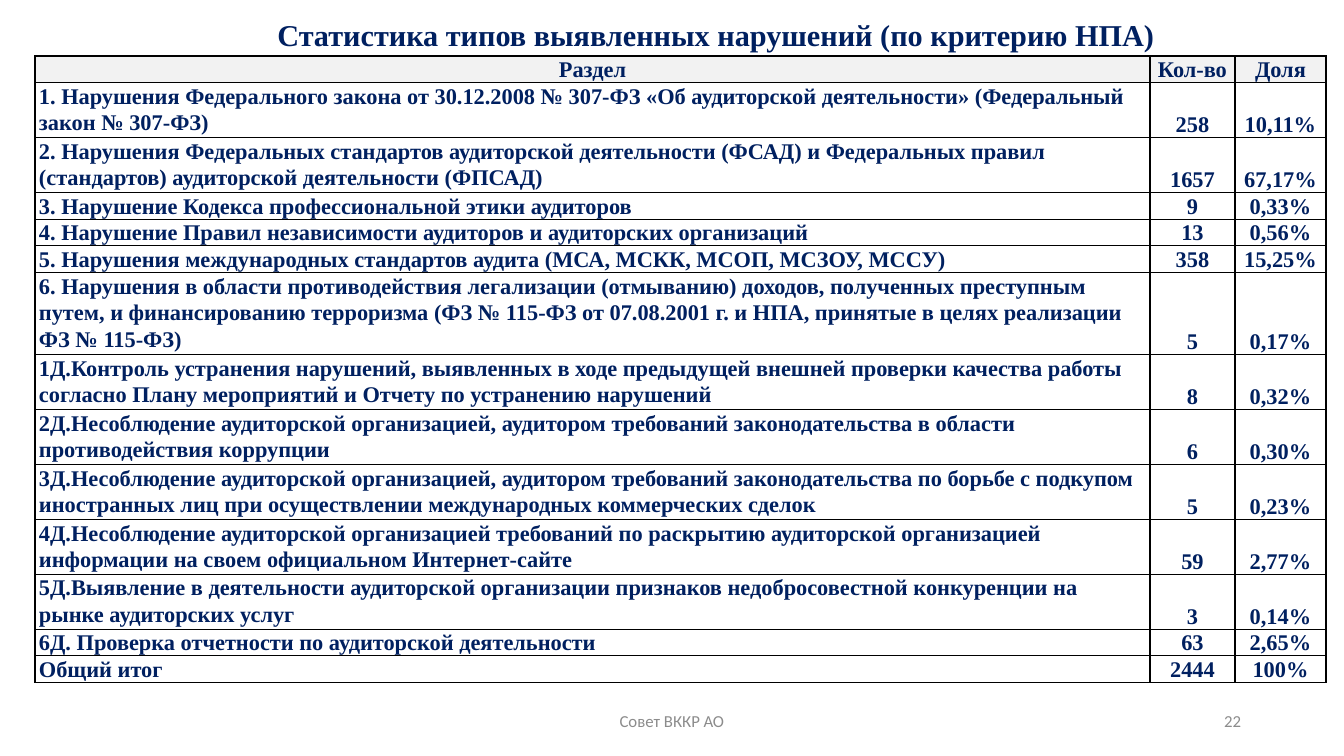
from pptx import Presentation
from pptx.dml.color import RGBColor
from pptx.enum.text import MSO_ANCHOR, PP_ALIGN
from pptx.oxml import parse_xml
from pptx.util import Emu, Pt

COLORS = {"navy": "002060", "grey": "8C8C8C", "head": "F2F2F2", "line": "000000"}
SERIF = "Times New Roman"
NS = "http://schemas.openxmlformats.org/drawingml/2006/main"


def px(n):
    return Emu(round(n * 914400 / 100.8))


def write(frame, text, size, font, color, align, bold=False):
    par = frame.paragraphs[0]
    par.alignment = align
    run = par.add_run()
    run.text = text
    run.font.size = Pt(size)
    run.font.name = font
    run.font.bold = bold
    run.font.color.rgb = RGBColor.from_string(COLORS[color])
    return par


deck = Presentation()
deck.slide_width, deck.slide_height = px(1344), px(756)
slide = deck.slides.add_slide(deck.slide_layouts[6])

title = slide.shapes.add_textbox(px(90), px(0), px(1202), px(57)).text_frame
title.word_wrap = True
title.vertical_anchor = MSO_ANCHOR.MIDDLE
title.margin_left, title.margin_right = px(60), px(10)
title.margin_top, title.margin_bottom = px(12), px(0)
write(title, "Статистика типов выявленных нарушений (по критерию НПА)",
      21.6, SERIF, "navy", PP_ALIGN.CENTER, True)

rows = [
    (26, "Раздел", "Кол-во", "Доля"),
    (55, "1. Нарушения Федерального закона от 30.12.2008 № 307-ФЗ «Об аудиторской деятельности» (Федеральный закон № 307-ФЗ)", "258", "10,11%"),
    (55, "2. Нарушения Федеральных стандартов аудиторской деятельности (ФСАД) и Федеральных правил (стандартов) аудиторской деятельности (ФПСАД)", "1657", "67,17%"),
    (26, "3. Нарушение Кодекса профессиональной этики аудиторов", "9", "0,33%"),
    (26, "4. Нарушение Правил независимости аудиторов и аудиторских организаций", "13", "0,56%"),
    (26, "5. Нарушения международных стандартов аудита (МСА, МСКК, МСОП, МСЗОУ, МССУ)", "358", "15,25%"),
    (82, "6. Нарушения в области противодействия легализации (отмыванию) доходов, полученных преступным путем, и финансированию терроризма (ФЗ № 115-ФЗ от 07.08.2001 г. и НПА, принятые в целях реализации ФЗ № 115-ФЗ)", "5", "0,17%"),
    (55, "1Д.Контроль устранения нарушений, выявленных в ходе предыдущей внешней проверки качества работы согласно Плану мероприятий и Отчету по устранению нарушений", "8", "0,32%"),
    (55, "2Д.Несоблюдение аудиторской организацией, аудитором требований законодательства в области противодействия коррупции", "6", "0,30%"),
    (55, "3Д.Несоблюдение аудиторской организацией, аудитором требований законодательства по борьбе с подкупом иностранных лиц при осуществлении международных коммерческих сделок", "5", "0,23%"),
    (55, "4Д.Несоблюдение аудиторской организацией требований по раскрытию аудиторской организацией информации на своем официальном Интернет-сайте", "59", "2,77%"),
    (55, "5Д.Выявление в деятельности аудиторской организации признаков недобросовестной конкуренции на рынке аудиторских услуг", "3", "0,14%"),
    (26, "6Д. Проверка отчетности по аудиторской деятельности", "63", "2,65%"),
    (26, "Общий итог", "2444", "100%"),
]
widths = [1115, 85, 91]
high = sum(row[0] for row in rows)
table = slide.shapes.add_table(len(rows), len(widths), px(35), px(56),
                               px(sum(widths)), px(high)).table
table.horz_banding = False
for col, width in zip(table.columns, widths):
    col.width = px(width)

for r, (height, *texts) in enumerate(rows):
    table.rows[r].height = px(height)
    for c, text in enumerate(texts):
        cell = table.cell(r, c)
        cell.margin_left = cell.margin_right = px(4)
        cell.margin_top = cell.margin_bottom = px(0)
        if r == 0:
            cell.fill.solid()
            cell.fill.fore_color.rgb = RGBColor.from_string(COLORS["head"])
            cell.vertical_anchor = MSO_ANCHOR.MIDDLE
        else:
            cell.fill.background()
            cell.vertical_anchor = MSO_ANCHOR.BOTTOM if c else MSO_ANCHOR.TOP
        align = PP_ALIGN.LEFT if r and c == 0 else PP_ALIGN.CENTER
        par = write(cell.text_frame, text, 16, SERIF, "navy", align, True)
        par.line_spacing = Pt(19)
        props = cell._tc.get_or_add_tcPr()
        for i, side in enumerate(("lnL", "lnR", "lnT", "lnB")):
            props.insert(i, parse_xml(
                f'<a:{side} xmlns:a="{NS}" w="12700"><a:solidFill>'
                f'<a:srgbClr val="{COLORS["line"]}"/></a:solidFill></a:{side}>'))

for left, width, text, align in [
    (445, 454, "Совет ВККР АО", PP_ALIGN.CENTER),
    (949, 302, "22", PP_ALIGN.RIGHT),
]:
    foot = slide.shapes.add_textbox(px(left), px(701), px(width), px(40)).text_frame
    foot.word_wrap = True
    foot.vertical_anchor = MSO_ANCHOR.MIDDLE
    write(foot, text, 12, "Calibri", "grey", align)

deck.save("out.pptx")
